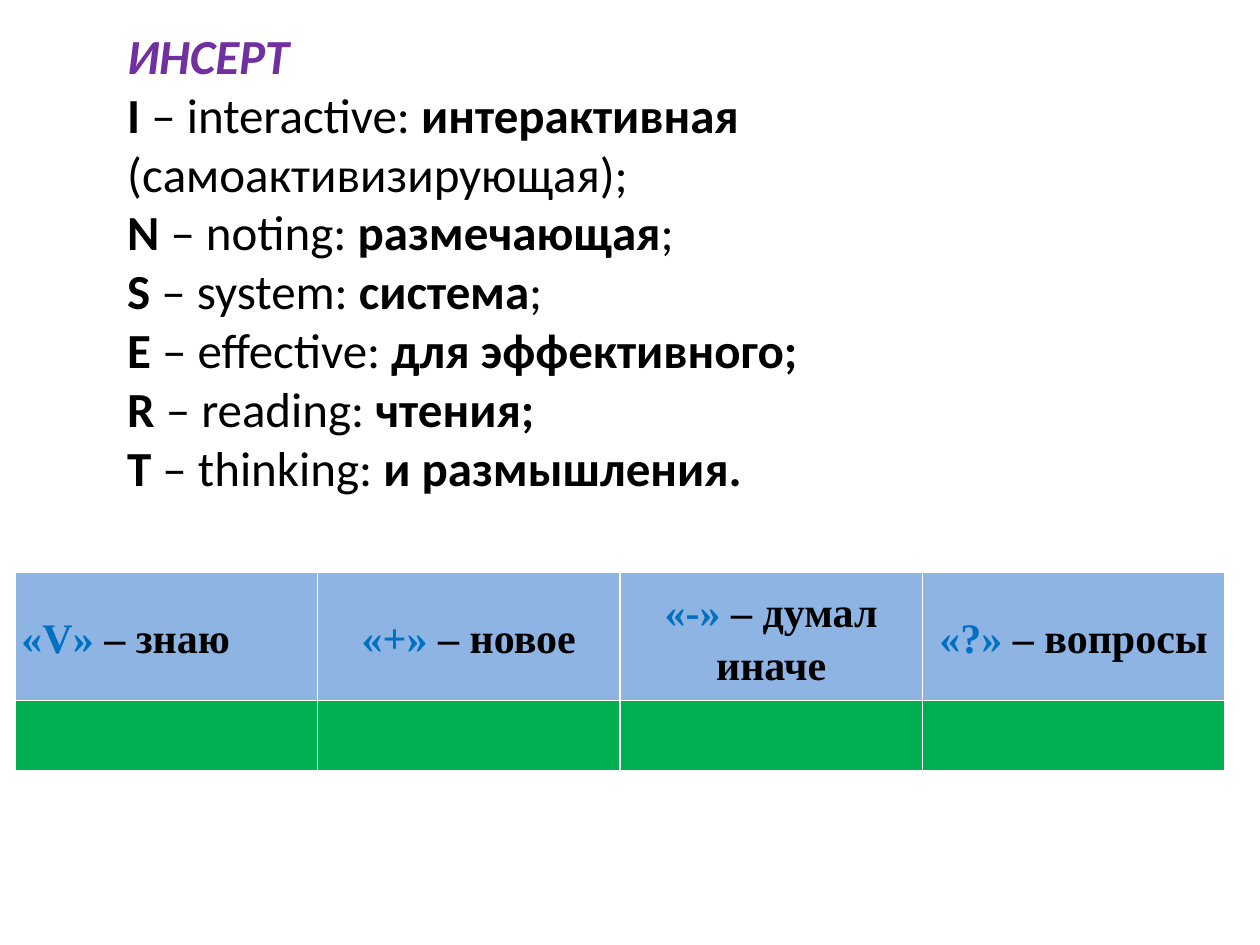
import pptx
import pptx.dml.color
import pptx.enum.text
import pptx.oxml
import pptx.oxml.ns
import pptx.util
from pptx.util import Inches

RGBColor = pptx.dml.color.RGBColor
PP_ALIGN = pptx.enum.text.PP_ALIGN
MIDDLE = pptx.enum.text.MSO_ANCHOR.MIDDLE

BLACK = RGBColor(0x00, 0x00, 0x00)
WHITE = RGBColor(0xFF, 0xFF, 0xFF)
PURPLE = RGBColor(0x70, 0x30, 0xA0)
MARK_BLUE = RGBColor(0x00, 0x70, 0xC0)
HEADER_BLUE = RGBColor(0x8E, 0xB4, 0xE3)
ANSWER_GREEN = RGBColor(0x00, 0xB0, 0x50)

# Each line: (text, bold) pieces
ACRONYM = [
    [("I", True), (" – interactive: ", False), ("интерактивная", True),
     (" (самоактивизирующая);", False)],
    [("N ", True), ("– noting: ", False), ("размечающая", True), (";", False)],
    [("S", True), (" – system: ", False), ("система", True), (";", False)],
    [("E", True), (" – effective: ", False), ("для эффективного;", True)],
    [("R", True), (" – reading: ", False), ("чтения;", True)],
    [("T", True), (" – thinking: ", False), ("и размышления.", True)],
]
MARKS = [("«V» ", "– знаю"), ("«+» ", "– новое"),
         ("«-» ", "– думал иначе"), ("«?» ", "– вопросы")]


class SlideBuilder:
    text_font, text_size, line_pitch = "Calibri", 28, 33.6
    table_font, table_size = "Times New Roman", 24
    text_left, text_width = Inches(0.91), Inches(6.61)

    def __init__(self, slide):
        self.slide = slide

    def place(self, holder, top, height):
        holder.left, holder.top = self.text_left, Inches(top)
        holder.width, holder.height = self.text_width, Inches(height)
        frame = holder.text_frame
        frame.word_wrap = True
        frame.auto_size = pptx.enum.text.MSO_AUTO_SIZE.NONE
        frame.vertical_anchor = pptx.enum.text.MSO_ANCHOR.TOP
        return frame

    def style_line(self, line, color):
        line.alignment = PP_ALIGN.LEFT
        line.line_spacing = pptx.util.Pt(self.line_pitch)
        line.space_before = pptx.util.Pt(0)
        line.font.name = self.text_font
        line.font.size = pptx.util.Pt(self.text_size)
        line.font.color.rgb = color

    def title(self, text, top, height):
        heading = self.place(self.slide.shapes.title, top, height).paragraphs[0]
        heading.text = text
        self.style_line(heading, PURPLE)
        heading.font.bold = heading.font.italic = True

    def body(self, lines, top, height):
        frame = self.place(self.slide.placeholders[1], top, height)
        for index, pieces in enumerate(lines):
            line = frame.add_paragraph() if index else frame.paragraphs[0]
            properties = line._p.get_or_add_pPr()
            properties.set("marL", "0")
            properties.set("indent", "0")
            pptx.oxml.ns.qn("a:buNone")
            properties.append(pptx.oxml.parse_xml(
                f'<a:buNone {pptx.oxml.ns.nsdecls("a")}/>'))
            self.style_line(line, BLACK)
            for text, bold in pieces:
                run = line.add_run()
                run.text, run.font.bold = text, bold

    def cell(self, cell, fill):
        properties = cell._tc.get_or_add_tcPr()
        for side in ("lnL", "lnR", "lnT", "lnB"):
            properties.append(pptx.oxml.parse_xml(
                f'<a:{side} {pptx.oxml.ns.nsdecls("a")} w="12700"><a:solidFill>'
                f'<a:srgbClr val="{WHITE}"/></a:solidFill></a:{side}>'))
        cell.fill.solid()
        cell.fill.fore_color.rgb = fill

    def mark(self, cell, sign, meaning, centred):
        cell.vertical_anchor = MIDDLE
        cell.margin_left = cell.margin_right = Inches(0.05)
        cell.margin_top = cell.margin_bottom = Inches(0.05)
        label = cell.text_frame.paragraphs[0]
        label.line_spacing = 1.15
        if centred:
            label.alignment = PP_ALIGN.CENTER
            label.space_after = pptx.util.Pt(10)
        label.font.name = self.table_font
        label.font.size = pptx.util.Pt(self.table_size)
        label.font.bold = True
        for text, color in ((sign, MARK_BLUE), (meaning, BLACK)):
            run = label.add_run()
            run.text, run.font.color.rgb = text, color

    def table(self, marks, left, top, width, row_heights):
        grid = self.slide.shapes.add_table(
            len(row_heights), len(marks), Inches(left), Inches(top),
            Inches(width), Inches(sum(row_heights))).table
        for row, height in zip(grid.rows, row_heights):
            row.height = Inches(height)
        for column, (sign, meaning) in enumerate(marks):
            self.cell(grid.cell(0, column), HEADER_BLUE)
            self.cell(grid.cell(1, column), ANSWER_GREEN)
            self.mark(grid.cell(0, column), sign, meaning, centred=column > 0)


def main():
    deck = pptx.Presentation()
    deck.slide_width, deck.slide_height = Inches(10), Inches(7.5)
    builder = SlideBuilder(deck.slides.add_slide(deck.slide_layouts[1]))

    # Acronym and its meaning
    builder.title("ИНСЕРТ", 0.15, 0.57)
    builder.body(ACRONYM, 0.62, 3.4)

    # Reading marks with room for answers
    builder.table(MARKS, 0.12, 4.54, 9.6, (1.02, 0.56))

    deck.save("out.pptx")


if __name__ == "__main__":
    main()
